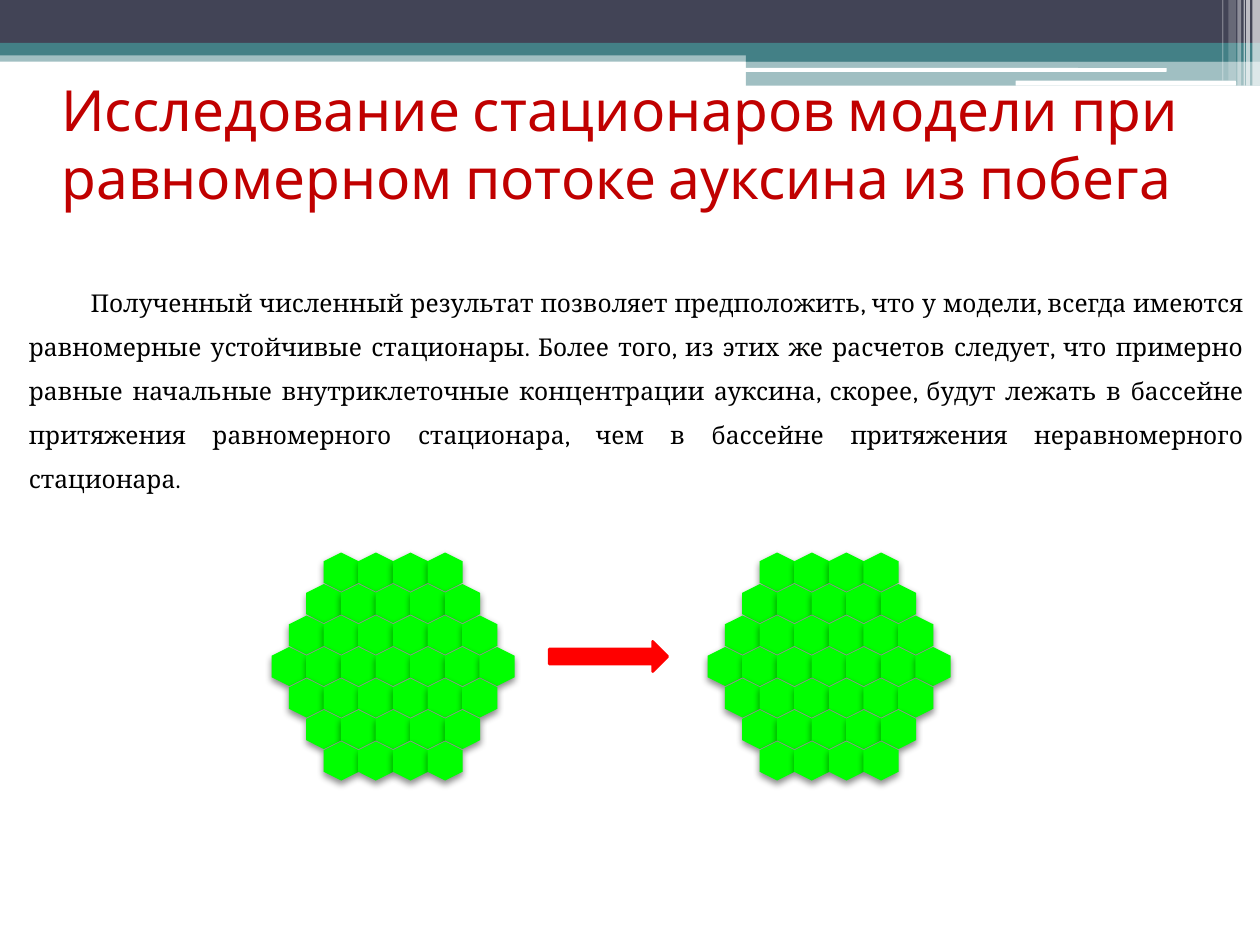
from lxml import etree
from pptx import Presentation
from pptx.dml.color import RGBColor
from pptx.enum.shapes import MSO_SHAPE
from pptx.enum.text import MSO_ANCHOR, PP_ALIGN
from pptx.oxml.ns import qn
from pptx.util import Inches, Pt

RECT, ROUNDED = MSO_SHAPE.RECTANGLE, MSO_SHAPE.ROUNDED_RECTANGLE
HEXAGON, ARROW = MSO_SHAPE.HEXAGON, MSO_SHAPE.RIGHT_ARROW
BLANK_LAYOUT = 6

THEME = {
    "navy": "424456", "teal": "438086", "white": "FFFFFF", "black": "000000",
    "title": "C00000", "cell": "00FF00", "arrow": "FF0000",
    "title_font": "Cabin", "title_size": 32.4,
    "body_font": "Cambria", "body_size": 14,
}

TITLE = "Исследование стационаров модели при равномерном потоке ауксина из побега"
BODY = (
    "Полученный численный результат позволяет предположить, что у модели, "
    "всегда имеются равномерные устойчивые стационары. Более того, из этих же "
    "расчетов следует, что примерно равные начальные внутриклеточные "
    "концентрации ауксина, скорее, будут лежать в бассейне притяжения "
    "равномерного стационара, чем в бассейне притяжения неравномерного стационара."
)

# Header bands: preset, (left, top, width, height), colour, opacity in percent
BANDS = [
    (RECT, (0, 0.4, 10, 0.09), "teal", 50),
    (RECT, (0, 0, 10, 0.34), "navy", 100),
    (RECT, (0, 0.34, 10, 0.1), "teal", 100),
    (RECT, (5.92, 0.39, 4.08, 0.1), "teal", 100),
    (RECT, (5.92, 0.48, 4.08, 0.2), "teal", 50),
    (ROUNDED, (5.91, 0.54, 3.35, 0.03), "white", 100),
    (ROUNDED, (8.06, 0.64, 1.75, 0.04), "white", 100),
]
# Vertical stripes at the right edge: left, width, height, opacity
STRIPES = [
    (9.94, 0.06, 0.68, 65), (9.89, 0.03, 0.68, 65), (9.87, 0.01, 0.68, 60),
    (9.82, 0.03, 0.68, 40), (9.75, 0.06, 0.64, 20), (9.7, 0.01, 0.64, 30),
]

TISSUE_CENTRES = [3.12, 6.58]
TISSUE_TOP = 4.4
CELLS_PER_ROW = [4, 5, 6, 7, 6, 5, 4]
CELL_WIDTH, CELL_HEIGHT = 0.31, 0.28
COLUMN_STEP, ROW_STEP = 0.275, 0.25


def colour(name):
    return RGBColor.from_string(THEME[name])


def add_filled(shapes, preset, box, fill, opacity=100):
    shape = shapes.add_shape(preset, *map(Inches, box))
    shape.shadow.inherit = False
    shape.fill.solid()
    shape.fill.fore_color.rgb = colour(fill)
    shape.line.fill.background()
    if opacity < 100:
        tint = shape.fill._xPr.find(qn("a:solidFill"))[0]
        etree.SubElement(tint, qn("a:alpha"), val=str(opacity * 1000))
    return shape


def add_soft_shadow(shape):
    effects = shape._element.spPr.find(qn("a:effectLst"))
    shadow = etree.SubElement(
        effects, qn("a:outerShdw"), blurRad=str(Pt(4)), dist=str(Pt(2)),
        dir="5400000", rotWithShape="0")
    tint = etree.SubElement(shadow, qn("a:srgbClr"), val=THEME["black"])
    etree.SubElement(tint, qn("a:alpha"), val="45000")


def add_text(page, box, text, style, text_colour):
    frame = page.shapes.add_textbox(*map(Inches, box)).text_frame
    frame.word_wrap = True
    para = frame.paragraphs[0]
    para.text = text
    para.font.name = THEME[style + "_font"]
    para.font.size = Pt(THEME[style + "_size"])
    para.font.color.rgb = colour(text_colour)
    return frame


def add_header(page):
    for preset, box, fill, opacity in BANDS:
        add_filled(page.shapes, preset, box, fill, opacity)
    for left, width, height, opacity in STRIPES:
        add_filled(page.shapes, RECT, (left, 0, width, height), "white", opacity)


def add_tissue(page, centre):
    """Stack centred rows of hexagonal cells into one larger hexagon."""
    tissue = page.shapes.add_group_shape()
    for row, count in enumerate(CELLS_PER_ROW):
        first = centre - CELL_WIDTH / 2 - (count - 1) * COLUMN_STEP / 2
        for column in range(count):
            box = (first + column * COLUMN_STEP, TISSUE_TOP + row * ROW_STEP,
                   CELL_WIDTH, CELL_HEIGHT)
            cell = add_filled(tissue.shapes, HEXAGON, box, "cell")
            cell.rotation = 90
            add_soft_shadow(cell)


def main():
    deck = Presentation()
    deck.slide_width, deck.slide_height = Inches(10), Inches(7.5)
    page = deck.slides.add_slide(deck.slide_layouts[BLANK_LAYOUT])

    add_header(page)

    body = add_text(page, (0.09, 2.12, 9.88, 1.47), BODY, "body", "black")
    para = body.paragraphs[0]
    para.alignment = PP_ALIGN.JUSTIFY
    para.line_spacing = 1.5
    indents = para._p.get_or_add_pPr()
    indents.set("marL", str(Inches(0.04)))
    indents.set("indent", str(Inches(0.49)))

    title = add_text(page, (0.39, 0.51, 9.61, 1.25), TITLE, "title", "title")
    title.vertical_anchor = MSO_ANCHOR.MIDDLE

    arrow = add_filled(page.shapes, ARROW, (4.36, 5.09, 0.94, 0.24), "arrow")
    arrow.line.color.rgb = colour("arrow")
    arrow.line.width = Pt(1.5)

    for centre in TISSUE_CENTRES:
        add_tissue(page, centre)

    deck.save("out.pptx")


if __name__ == "__main__":
    main()
